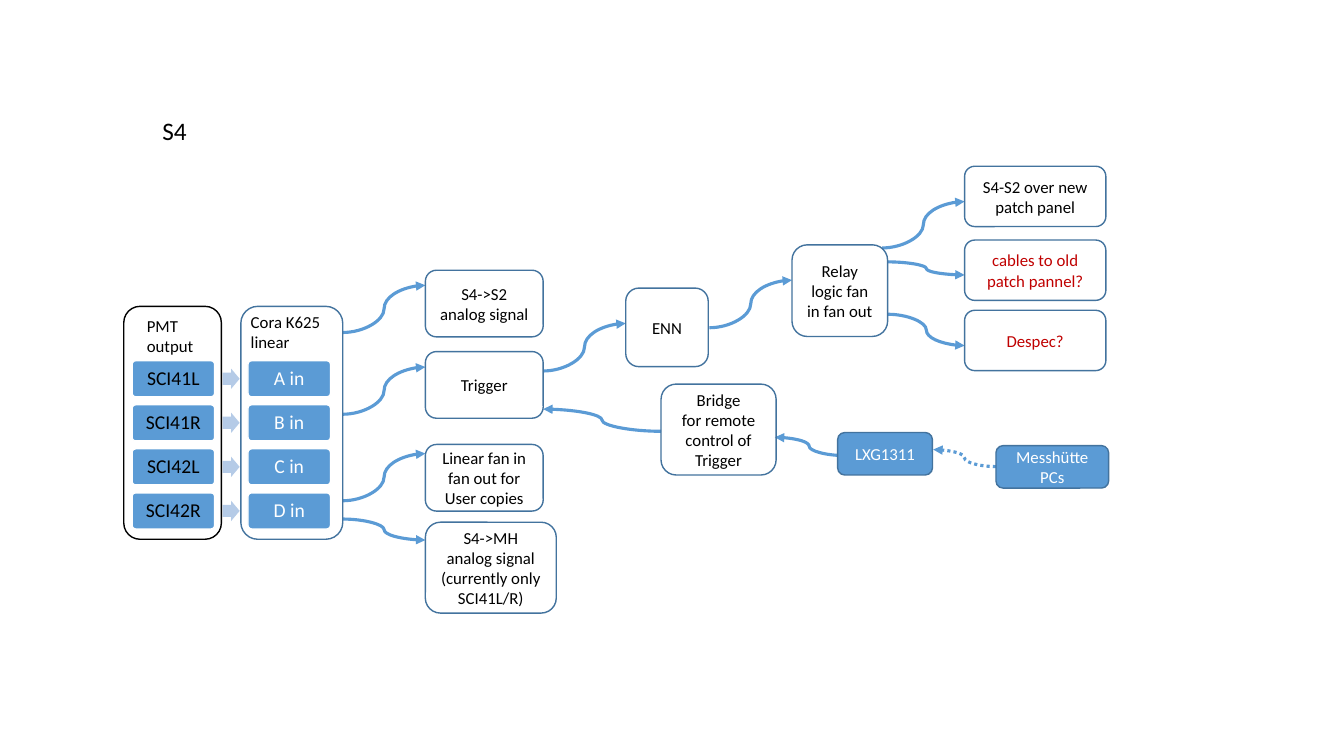
from typing import NamedTuple, Optional

import pptx
import pptx.dml.color
import pptx.enum.dml
import pptx.enum.shapes
import pptx.enum.text
import pptx.oxml.ns
import pptx.util
from lxml import etree

Cm = pptx.util.Cm
Pt = pptx.util.Pt
RGB = pptx.dml.color.RGBColor
Kind = pptx.enum.shapes.MSO_SHAPE
Align = pptx.enum.text.PP_ALIGN
Anchor = pptx.enum.text.MSO_ANCHOR
qn = pptx.oxml.ns.qn

BLUE = RGB(0x5B, 0x9B, 0xD5)
EDGE = RGB(0x43, 0x73, 0x9E)
PALE = RGB(0xB5, 0xCB, 0xE7)
RED = RGB(0xC0, 0x00, 0x00)
BLACK = RGB(0x00, 0x00, 0x00)
WHITE = RGB(0xFF, 0xFF, 0xFF)


class Box(NamedTuple):
    text: str
    left: float
    top: float
    width: float
    height: float
    ink: RGB = BLACK
    fill: Optional[RGB] = None
    edge: RGB = EDGE


class Wire(NamedTuple):
    x1: float
    y1: float
    x2: float
    y2: float
    dotted: bool = False


# Rounded modules of the signal chain, lengths in centimetres
BOXES = [
    Box("", 6.07, 7.72, 2.57, 5.87),
    Box("", 3.12, 7.72, 2.46, 5.87, edge=BLACK),
    Box("S4->S2 analog signal", 10.72, 6.81, 2.97, 1.68),
    Box("Trigger", 10.72, 8.86, 2.97, 1.68),
    Box("Linear fan in fan out for User copies", 10.72, 11.2, 2.97, 1.68),
    Box("S4->MH analog signal (currently only SCI41L/R)", 10.72, 13.16, 3.3, 2.29),
    Box("ENN", 15.77, 7.26, 2.08, 1.98),
    Box("Relay logic fan in fan out", 19.96, 6.17, 2.41, 2.31),
    Box("S4-S2 over new patch panel", 24.31, 4.19, 3.56, 1.52),
    Box("cables to old patch pannel?", 24.31, 6.05, 3.56, 1.52, RED),
    Box("Despec?", 24.31, 7.82, 3.56, 1.52, RED),
    Box("Bridge\nfor remote control of Trigger", 16.66, 9.68, 2.9, 2.29),
    Box("LXG1311", 21.11, 10.9, 2.39, 1.07, WHITE, BLUE),
    Box("Messhütte PCs", 25.1, 11.23, 2.84, 1.07, WHITE, BLUE),
]

# Curved arrows, from start to head
WIRES = [
    Wire(8.64, 8.38, 10.72, 7.19),
    Wire(8.64, 10.44, 10.72, 9.25),
    Wire(8.64, 12.62, 10.72, 11.43),
    Wire(8.64, 13.08, 10.72, 13.61),
    Wire(13.69, 9.35, 15.77, 8.15),
    Wire(17.88, 8.26, 19.96, 7.06),
    Wire(22.23, 6.25, 24.31, 5.08),
    Wire(22.38, 6.6, 24.31, 6.93),
    Wire(22.38, 7.92, 24.31, 8.71),
    Wire(16.66, 10.87, 13.69, 10.31),
    Wire(21.26, 11.48, 19.53, 11.02),
    Wire(25.1, 11.76, 23.52, 11.33, True),
]

# Detector channels and the inputs they feed
PAIRS = [("SCI41L", "A in"), ("SCI41R", "B in"), ("SCI42L", "C in"), ("SCI42R", "D in")]
ROW_TOP, ROW_STEP = 9.09, 1.11


def write(frame, text: str, *, size: float = 12, ink: RGB = BLACK,
          align=Align.LEFT, anchor=Anchor.TOP, wrap: bool = True,
          inset: Optional[float] = None, pitch: Optional[float] = None) -> None:
    frame.text = text
    frame.word_wrap = wrap
    frame.vertical_anchor = anchor
    if inset is not None:
        frame.margin_left = frame.margin_right = Cm(inset)
        frame.margin_top = frame.margin_bottom = Cm(inset)
    for para in frame.paragraphs:
        para.alignment = align
        if pitch is not None:
            para.line_spacing = pitch
        para.font.name = "Calibri"
        para.font.size = Pt(size)
        para.font.color.rgb = ink


def label(slide, text: str, left: float, top: float, width: float,
          height: float, **style) -> None:
    area = slide.shapes.add_textbox(Cm(left), Cm(top), Cm(width), Cm(height))
    write(area.text_frame, text, **style)


def draw(slide, box: Box, kind=Kind.ROUNDED_RECTANGLE, **style):
    shape = slide.shapes.add_shape(
        kind, Cm(box.left), Cm(box.top), Cm(box.width), Cm(box.height))
    shape.shadow.inherit = False
    if box.fill is None:
        shape.fill.background()
    else:
        shape.fill.solid()
        shape.fill.fore_color.rgb = box.fill
    shape.line.color.rgb = box.edge
    shape.line.width = Pt(1)
    if box.text:
        write(shape.text_frame, box.text, ink=box.ink, align=Align.CENTER,
              anchor=Anchor.MIDDLE, **style)
    return shape


def link(slide, wire: Wire) -> None:
    curve = slide.shapes.add_connector(
        pptx.enum.shapes.MSO_CONNECTOR.CURVE,
        Cm(wire.x1), Cm(wire.y1), Cm(wire.x2), Cm(wire.y2))
    curve.line.color.rgb = BLUE
    curve.line.width = Pt(2.25)
    if wire.dotted:
        curve.line.dash_style = pptx.enum.dml.MSO_LINE.ROUND_DOT
    props = curve.element.spPr
    head = etree.SubElement(props.find(qn("a:ln")), qn("a:tailEnd"))
    head.set("type", "triangle")
    etree.SubElement(props, qn("a:effectLst"))


def row(slide, top: float, source: str, target: str) -> None:
    for text, left, ink in ((source, 3.33, BLACK), (target, 6.25, WHITE)):
        chip = draw(slide, Box(text, left, top, 2.08, 0.91, ink, BLUE, WHITE),
                    size=14, inset=0.18, pitch=0.9)
        chip.adjustments[0] = 0.1
    arrow = draw(slide, Box("", 5.61, top + 0.2, 0.43, 0.51, fill=PALE), Kind.RIGHT_ARROW)
    arrow.adjustments[0] = 0.6
    arrow.line.fill.background()


def main() -> None:
    deck = pptx.Presentation()
    deck.slide_width, deck.slide_height = Cm(33.87), Cm(19.05)
    slide = deck.slides.add_slide(deck.slide_layouts[6])

    # Title and channel rows
    label(slide, "S4", 3.84, 2.77, 1.14, 1.02, size=18, wrap=False)
    for index, (source, target) in enumerate(PAIRS):
        row(slide, ROW_TOP + index * ROW_STEP, source, target)

    # Signal chain
    for wire in WIRES:
        link(slide, wire)
    for box in BOXES:
        draw(slide, box)

    # Column heads
    label(slide, "Cora K625 linear", 6.07, 7.72, 2.57, 1.27)
    label(slide, "PMT output", 3.45, 7.82, 1.85, 1.27)

    deck.save("out.pptx")


if __name__ == "__main__":
    main()
